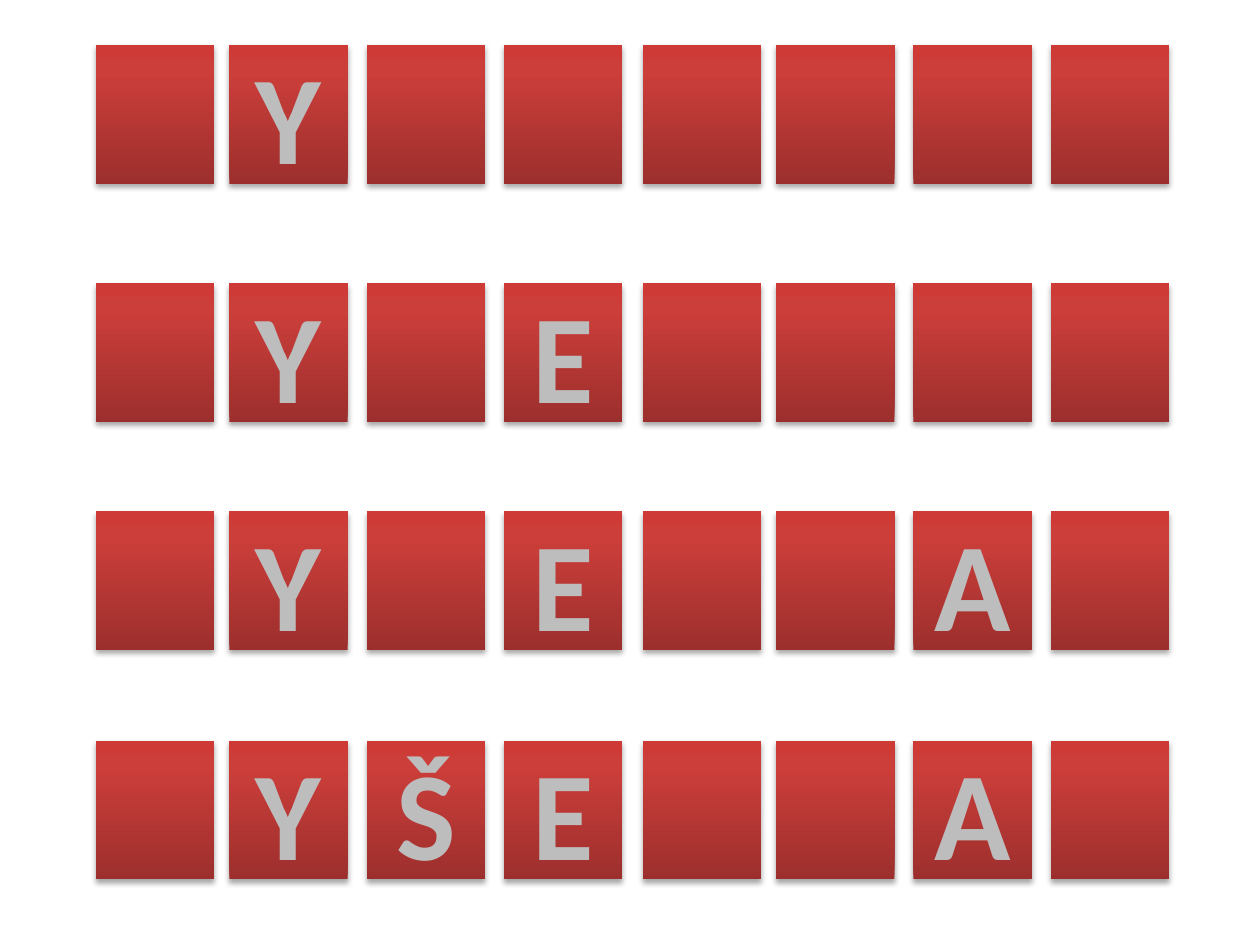
"""Build a slide of letter tiles that reveals a hidden word row by row."""
from dataclasses import dataclass

from pptx import Presentation
from pptx import oxml as ox
from pptx import util as u
from pptx.dml import color
from pptx.enum import shapes, text
from pptx.oxml import ns
from pptx.slide import Slide

TILE_WIDTH, TILE_HEIGHT = 0.94, 1.1
COLUMN_LEFTS = (0.76, 1.82, 2.91, 4, 5.1, 6.16, 7.25, 8.34)
BLANK = "."
LETTER_FORMAT = {"name": "Calibri", "size": u.Pt(72), "bold": True}
LETTER_COLOUR = "BDBDBD"
TILE_STOPS = ((0, "9C2F2D"), (80, "CB3E3A"), (100, "CE3B37"))
SHADOW_COLOUR = "000000"


@dataclass(frozen=True)
class TileRow:
    top: float
    letters: str


ROWS = (
    TileRow(0.36, ".Y......"),
    TileRow(2.25, ".Y.E...."),
    TileRow(4.06, ".Y.E..A."),
    TileRow(5.88, ".YŠE..A."),
)


def rgb(value: str) -> color.RGBColor:
    return color.RGBColor.from_string(value)


def gradient_fill(stops: tuple):
    marks = "".join(
        f'<a:gs pos="{position * 1000}"><a:srgbClr val="{rgb(value)}"/></a:gs>'
        for position, value in stops
    )
    return ox.parse_xml(
        f'<a:gradFill {ns.nsdecls("a")} rotWithShape="1"><a:gsLst>{marks}</a:gsLst>'
        '<a:lin ang="16200000" scaled="0"/></a:gradFill>'
    )


def drop_shadow():
    return ox.parse_xml(
        f'<a:effectLst {ns.nsdecls("a")}>'
        f'<a:outerShdw blurRad="{u.Pt(3.15)}" dist="{u.Pt(1.8)}" dir="5400000" rotWithShape="0">'
        f'<a:srgbClr val="{rgb(SHADOW_COLOUR)}"><a:alpha val="35000"/></a:srgbClr>'
        '</a:outerShdw></a:effectLst>'
    )


def write_letter(frame, letter: str) -> None:
    frame.vertical_anchor = text.MSO_ANCHOR.MIDDLE
    para = frame.paragraphs[0]
    para.alignment = text.PP_ALIGN.CENTER
    span = para.add_run()
    span.text = letter
    for attribute, value in LETTER_FORMAT.items():
        setattr(span.font, attribute, value)
    span.font.color.rgb = rgb(LETTER_COLOUR)


def draw_tile(page: Slide, left: float, top: float, letter: str) -> None:
    tile = page.shapes.add_shape(
        shapes.MSO_SHAPE.RECTANGLE,
        u.Inches(left), u.Inches(top), u.Inches(TILE_WIDTH), u.Inches(TILE_HEIGHT),
    )
    properties = tile.element.spPr
    properties.append(gradient_fill(TILE_STOPS))
    tile.line.fill.background()
    properties.append(drop_shadow())
    if letter != BLANK:
        write_letter(tile.text_frame, letter)


def main() -> None:
    deck = Presentation()
    deck.slide_width, deck.slide_height = u.Inches(10), u.Inches(7.5)
    page = deck.slides.add_slide(deck.slide_layouts[6])
    for row in ROWS:
        for left, letter in zip(COLUMN_LEFTS, row.letters):
            draw_tile(page, left, row.top, letter)
    deck.save("out.pptx")


if __name__ == "__main__":
    main()
